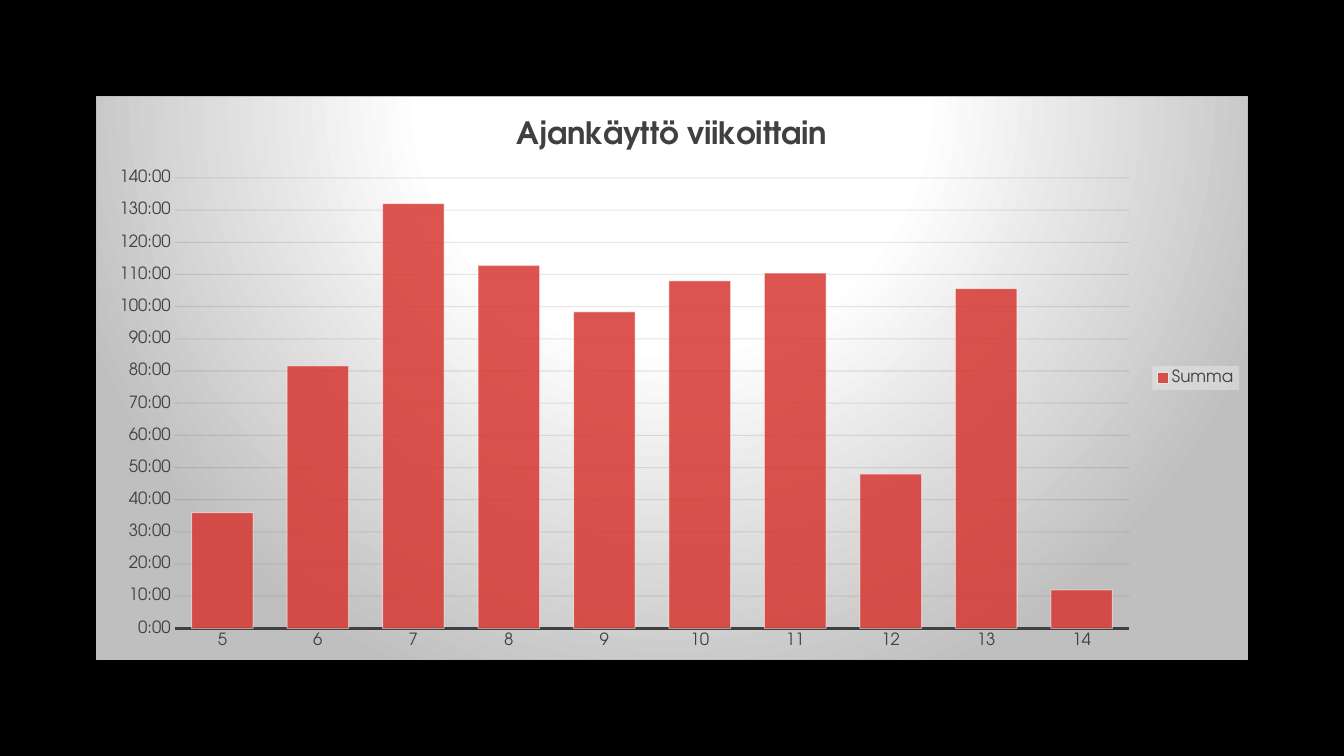
from dataclasses import dataclass

from pptx import Presentation
from pptx.chart.data import CategoryChartData
from pptx.dml.color import RGBColor
from pptx.enum.chart import XL_CHART_TYPE, XL_LEGEND_POSITION, XL_TICK_MARK
from pptx.oxml import parse_xml
from pptx.oxml.ns import nsdecls
from pptx.util import Cm, Pt

STACKED = XL_CHART_TYPE.COLUMN_STACKED
RIGHT = XL_LEGEND_POSITION.RIGHT
NO_TICK = XL_TICK_MARK.NONE


@dataclass(frozen=True)
class Theme:
    font: str = "TeX Gyre Adventor"
    background: str = "000000"
    ink: str = "404040"
    grid: str = "0D0D0D"
    bar: str = "D63731"
    light: str = "FFFFFF"
    edge: str = "BFBFBF"
    legend: str = "F2F2F2"
    title_size: int = 22
    label_size: int = 12
    hairline: float = 0.75
    axis_line: float = 1.5


THEME = Theme()
WEEKS = [str(week) for week in range(5, 15)]
DAYS_SPENT = [1.5, 3.4, 5.5, 4.7, 4.1, 4.5, 4.6, 2, 4.4, 0.5]
HOURS_FORMAT = "[h]:mm"


def style_font(font, size=THEME.label_size, color=THEME.ink, bold=False):
    font.name = THEME.font
    font.size = Pt(size)
    font.bold = bold
    font.color.rgb = RGBColor.from_string(color)


def write_text(frame, text, **font_format):
    run = frame.paragraphs[0].add_run()
    run.text = text
    style_font(run.font, **font_format)


def style_line(line, color, width=THEME.hairline):
    line.color.rgb = RGBColor.from_string(color)
    line.width = Pt(width)


def fade(chart, xpath, percent):
    """Set the opacity of every colour found at the path."""
    for color in chart.element.xpath(xpath):
        color.append(parse_xml(
            f'<a:alpha {nsdecls("a")} val="{percent * 1000}"/>'))


def add_area_format(anchor, content):
    """Put shape properties right after the given chart element."""
    anchor.addnext(parse_xml(
        f'<c:spPr {nsdecls("c", "a")}>{content}</c:spPr>'))


def style_chart_area(chart):
    stops = [(0, THEME.light), (39, THEME.light), (100, THEME.edge)]
    stop_list = "".join(
        f'<a:gs pos="{place * 1000}"><a:srgbClr val="{color}"/></a:gs>'
        for place, color in stops)
    add_area_format(
        chart.element.xpath("c:chart")[0],
        f'<a:gradFill><a:gsLst>{stop_list}</a:gsLst><a:path path="circle">'
        '<a:fillToRect l="50000" t="-80000" r="50000" b="180000"/>'
        f'</a:path></a:gradFill><a:ln w="{Pt(THEME.hairline)}"><a:solidFill>'
        f'<a:srgbClr val="{THEME.edge}"/></a:solidFill></a:ln>')


def style_axes(chart):
    weeks, hours = chart.category_axis, chart.value_axis
    for axis in (weeks, hours):
        axis.major_tick_mark = axis.minor_tick_mark = NO_TICK
        style_font(axis.tick_labels.font)
    style_line(weeks.format.line, THEME.ink, THEME.axis_line)
    hours.format.line.fill.background()
    hours.minimum_scale = 0
    hours.maximum_scale = 140 / 24
    hours.major_unit = 10 / 24
    hours.tick_labels.number_format = HOURS_FORMAT
    hours.tick_labels.number_format_is_linked = False
    hours.has_major_gridlines = True
    style_line(hours.major_gridlines.format.line, THEME.grid)
    fade(chart, ".//c:majorGridlines//a:srgbClr", 10)


def style_bars(chart):
    plot = chart.plots[0]
    plot.gap_width, plot.overlap = 55, 100
    plot.vary_by_categories = False
    total = plot.series[0]
    total.format.fill.solid()
    total.format.fill.fore_color.rgb = RGBColor.from_string(THEME.bar)
    style_line(total.format.line, THEME.light)
    fade(chart, ".//c:ser/c:spPr/a:solidFill/a:srgbClr", 85)
    fade(chart, ".//c:ser/c:spPr/a:ln//a:srgbClr", 50)


def style_legend(chart):
    chart.has_legend = True
    chart.legend.position = RIGHT
    chart.legend.include_in_layout = False
    style_font(chart.legend.font)
    add_area_format(
        chart.element.xpath(".//c:legend/c:overlay")[0],
        f'<a:solidFill><a:srgbClr val="{THEME.legend}">'
        '<a:alpha val="39000"/></a:srgbClr></a:solidFill>'
        '<a:ln><a:noFill/></a:ln>')


def add_weekly_chart(slide, left, top, width, height):
    usage = CategoryChartData(number_format=HOURS_FORMAT)
    usage.categories = WEEKS
    usage.add_series("Summa", DAYS_SPENT)
    chart = slide.shapes.add_chart(
        STACKED, left, top, width, height, usage).chart
    style_font(chart.font)
    chart.has_title = True
    write_text(chart.chart_title.text_frame, "Ajankäyttö viikoittain",
               size=THEME.title_size, bold=True)
    style_chart_area(chart)
    style_axes(chart)
    style_bars(chart)
    style_legend(chart)


def main():
    deck = Presentation()
    deck.slide_width, deck.slide_height = Cm(33.87), Cm(19.05)
    slide = deck.slides.add_slide(deck.slide_layouts[6])
    slide.background.fill.solid()
    slide.background.fill.fore_color.rgb = RGBColor.from_string(
        THEME.background)
    margin = Cm(2.42)
    add_weekly_chart(slide, margin, margin,
                     deck.slide_width - 2 * margin, Cm(14.21))
    deck.save("out.pptx")


if __name__ == "__main__":
    main()
